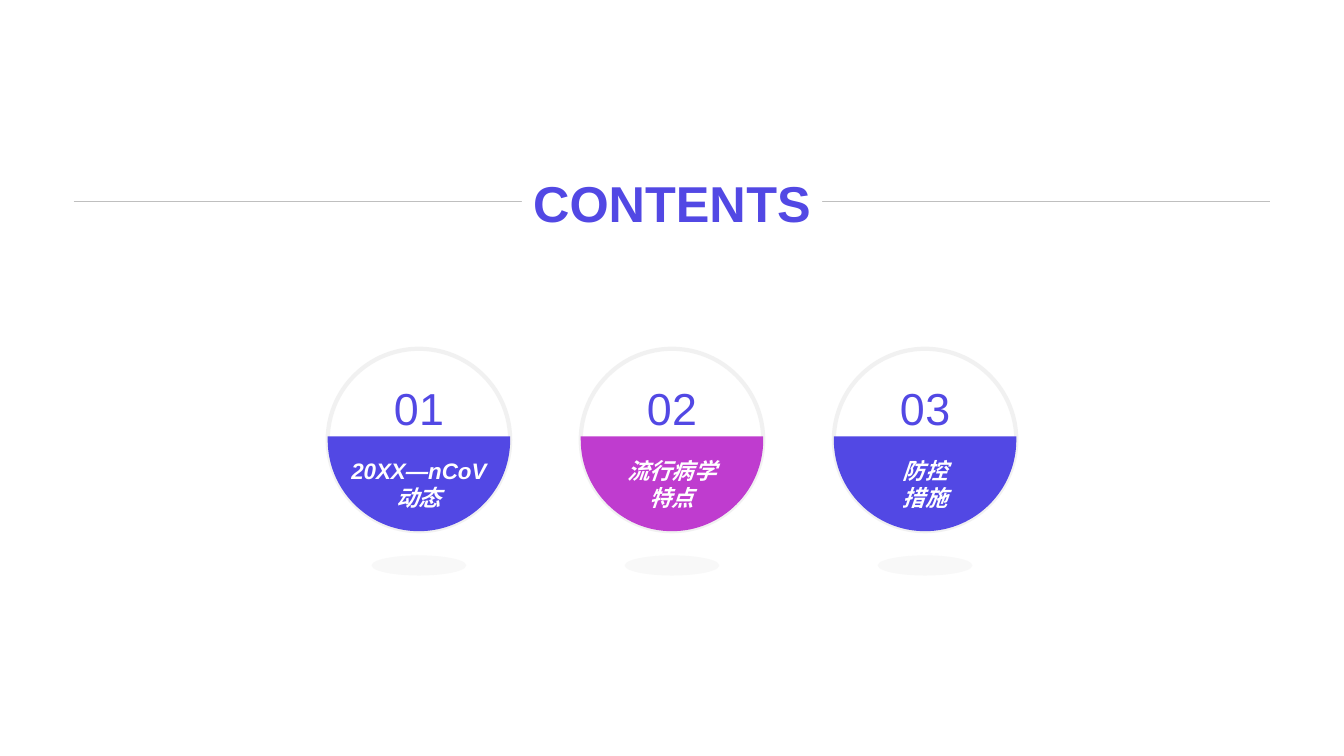
import lxml.etree
import pptx
import pptx.dml.color
import pptx.enum.shapes
import pptx.enum.text
import pptx.oxml.ns
import pptx.util

Inches = pptx.util.Inches
Pt = pptx.util.Pt
qn = pptx.oxml.ns.qn
OVAL = pptx.enum.shapes.MSO_SHAPE.OVAL
ANCHOR = pptx.enum.text.MSO_ANCHOR

COLORS = {
    "indigo": "5248E4",
    "magenta": "BF3CCF",
    "white": "FFFFFF",
    "rule": "BFBFBF",
    "ring": "D9D9D9",
    "shadow": "F2F2F2",
}
FONT = "Arial"
THIN_SPACE_SIZE = 1
CHAPTERS = [
    (["0", " ", "1"], [["20XX—nCoV"], ["动态"]], "indigo"),
    (["0", " ", "2"], [["流行病学"], ["特点"]], "magenta"),
    (["0", " ", "3"], [["防控"], ["措施"]], "indigo"),
]
DIAMETER = 1.81
CHAPTER_PITCH = 2.51
ARC_HANDLE = 0.55


def rgb(name):
    return pptx.dml.color.RGBColor.from_string(COLORS[name])


def paint(fill, color, opacity=100):
    fill.solid()
    fill.fore_color.rgb = rgb(color)
    if opacity < 100:
        tint = fill._xPr.find(".//" + qn("a:srgbClr"))
        lxml.etree.SubElement(tint, qn("a:alpha"), val=str(opacity * 1000))


def write(shape, lines, size, color, anchor, bold=False, italic=False, top=0):
    frame = shape.text_frame
    frame.word_wrap = True
    frame.auto_size = pptx.enum.text.MSO_AUTO_SIZE.NONE
    frame.vertical_anchor = anchor
    frame.margin_left = frame.margin_right = frame.margin_bottom = 0
    frame.margin_top = Inches(top)
    for index, parts in enumerate(lines):
        paragraph = frame.add_paragraph() if index else frame.paragraphs[0]
        paragraph.alignment = pptx.enum.text.PP_ALIGN.CENTER
        for part in parts:
            run = paragraph.add_run()
            run.text = part
            run.font.name = FONT
            run.font.size = Pt(THIN_SPACE_SIZE if part == " " else size)
            run.font.bold = bold
            run.font.italic = italic
            run.font.color.rgb = rgb(color)


def add_heading(slide, left, top, width, height):
    middle = top + 0.35
    rule = slide.shapes.add_connector(
        pptx.enum.shapes.MSO_CONNECTOR.STRAIGHT,
        Inches(left), Inches(middle), Inches(left + width), Inches(middle))
    rule.line.width = Pt(0.5)
    rule.line.color.rgb = rgb("rule")
    lxml.etree.SubElement(rule._element.spPr, qn("a:effectLst"))

    heading = slide.shapes.title
    heading_width = 2.98
    heading.left = Inches(left + (width - heading_width) / 2)
    heading.top = Inches(top)
    heading.width = Inches(heading_width)
    heading.height = Inches(height)
    paint(heading.fill, "white")
    write(heading, [["CONTEN", " ", "TS"]], 36, "indigo", ANCHOR.MIDDLE, bold=True)
    rule._element.addnext(heading._element)


def bend_segments(outline, first):
    segments = outline.findall(".//" + qn("a:lnTo"))[first:]
    for start in range(0, len(segments), 3):
        curve = lxml.etree.Element(qn("a:cubicBezTo"))
        segments[start].addprevious(curve)
        for segment in segments[start:start + 3]:
            curve.append(segment[0])
            segment.getparent().remove(segment)


def add_half_disc(slide, left, top, diameter, color):
    radius = diameter / 2
    handle = radius * ARC_HANDLE
    center, middle = left + radius, top + radius
    right, bottom = left + diameter, top + diameter
    chord = top + 0.87
    edge = [
        (right, chord), (right, middle),
        (right, middle + handle), (center + handle, bottom), (center, bottom),
        (center - handle, bottom), (left, middle + handle), (left, middle),
    ]
    builder = slide.shapes.build_freeform(Inches(left), Inches(chord))
    builder.add_line_segments([(Inches(x), Inches(y)) for x, y in edge])
    half_disc = builder.convert_to_shape()
    bend_segments(half_disc._element, 2)
    half_disc.shadow.inherit = False
    paint(half_disc.fill, color)
    half_disc.line.fill.background()
    return half_disc


def add_chapter(slide, left, top, diameter, number, lines, color):
    ring = slide.shapes.add_shape(
        OVAL, Inches(left), Inches(top), Inches(diameter), Inches(diameter))
    ring.shadow.inherit = False
    ring.fill.background()
    ring.line.width = Pt(3)
    paint(ring.line.fill, "ring", 35)
    write(ring, [number], 32, "indigo", ANCHOR.TOP, top=0.05)

    half_disc = add_half_disc(slide, left, top, diameter, color)
    write(half_disc, lines, 16, "white", ANCHOR.MIDDLE, bold=True, italic=True)

    shadow_width = 0.94
    ground_shadow = slide.shapes.add_shape(
        OVAL, Inches(left + (diameter - shadow_width) / 2), Inches(top + 2.05),
        Inches(shadow_width), Inches(0.2))
    ground_shadow.shadow.inherit = False
    paint(ground_shadow.fill, "shadow", 50)
    ground_shadow.line.fill.background()


def add_contents_slide(deck):
    slide = deck.slides.add_slide(deck.slide_layouts.get_by_name("Title Only"))
    add_heading(slide, 0.73, 1.65, 11.87, 0.71)
    for index, (number, lines, color) in enumerate(CHAPTERS):
        add_chapter(slide, 3.25 + index * CHAPTER_PITCH, 3.46, DIAMETER,
                    number, lines, color)


def main():
    deck = pptx.Presentation()
    deck.slide_width = Inches(13.33)
    deck.slide_height = Inches(7.5)
    add_contents_slide(deck)
    deck.save("out.pptx")


if __name__ == "__main__":
    main()
